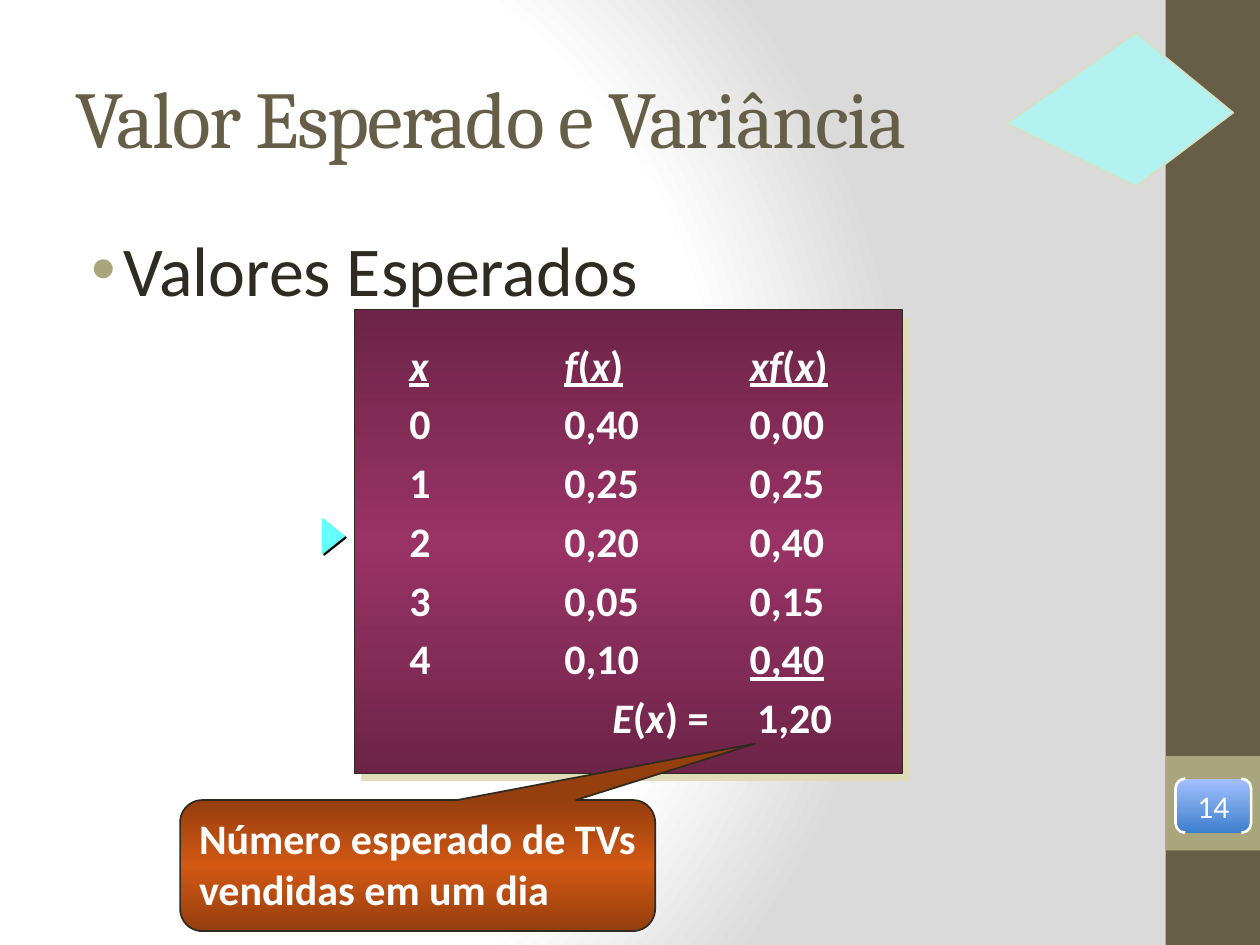
from dataclasses import dataclass

from lxml import etree
from pptx import Presentation
from pptx.dml.color import RGBColor
from pptx.enum.shapes import MSO_SHAPE
from pptx.enum.text import MSO_ANCHOR, PP_ALIGN
from pptx.oxml.ns import qn
from pptx.util import Emu, Inches, Pt

RECTANGLE = MSO_SHAPE.RECTANGLE
BRACKETS = MSO_SHAPE.DOUBLE_BRACKET
CALLOUT = MSO_SHAPE.ROUNDED_RECTANGULAR_CALLOUT
TRIANGLE = MSO_SHAPE.ISOSCELES_TRIANGLE
LEFT, CENTER = PP_ALIGN.LEFT, PP_ALIGN.CENTER
TOP, MIDDLE = MSO_ANCHOR.TOP, MSO_ANCHOR.MIDDLE
COLUMNS, ROWS = 10, 7.5
SLIDE_WIDTH, SLIDE_HEIGHT = Inches(10), Inches(7.5)
COLUMN, ROW = SLIDE_WIDTH / COLUMNS, SLIDE_HEIGHT / ROWS


@dataclass(frozen=True)
class Theme:
    """Colours, fonts and type sizes of the slide."""
    heading: str = "Cambria"
    text: str = "Calibri"
    brown: str = "675E47"
    olive: str = "A9A57C"
    ink: str = "2F2B20"
    sand: str = "DFDCB7"
    white: str = "FFFFFF"
    grey: str = "DADADA"
    aqua: str = "B3F0F0"
    cyan: str = "66FFFF"
    black: str = "000000"
    plum: str = "993366"
    rust: str = "D25814"
    title_size: float = 46
    body_size: float = 40
    data_size: float = 24
    number_size: float = 18


@dataclass(frozen=True)
class Box:
    """An area measured in columns and rows of the slide grid."""
    col: float
    row: float
    cols: float
    rows: float

    def inner(self, col, row, cols, rows):
        """Return a box placed from this box's corner."""
        return Box(self.col + col, self.row + row, cols, rows)

    def frame(self):
        """Return left, top, width and height in EMU."""
        return (Emu(round(self.col * COLUMN)), Emu(round(self.row * ROW)),
                Emu(round(self.cols * COLUMN)), Emu(round(self.rows * ROW)))


THEME = Theme()
HEADER = [("x", "iu"), ("\t", ""), ("f", "iu"), ("(", "u"), ("x", "iu"), (")", "u"),
          ("\t", ""), ("xf", "iu"), ("(", "u"), ("x", "iu"), (")", "u")]
DISTRIBUTION = [("0", "0,40", "0,00"), ("1", "0,25", "0,25"), ("2", "0,20", "0,40"),
                ("3", "0,05", "0,15"), ("4", "0,10", "0,40")]
EXPECTED = [("\t", ""), ("E", "i"), ("(", ""), ("x", "i"), (") =", ""), ("\t1,20", "")]


def child(parent, tag, **attributes):
    """Append a DrawingML element and return it."""
    element = etree.SubElement(parent, qn(tag))
    for key, value in attributes.items():
        element.set(key, str(value))
    return element


def add_run(paragraph, text, size, color, font=THEME.text, bold=False, style=""):
    """Add a run; style holds i for italic and u for underline."""
    run = paragraph.add_run()
    run.text = text
    run.font.size, run.font.name, run.font.bold = Pt(size), font, bold
    run.font.italic, run.font.underline = "i" in style, "u" in style
    run.font.color.rgb = RGBColor.from_string(color)
    return run


def set_gradient(fill, owner, stops):
    """Give a fill the stops (position, colour, shade) and return its element."""
    fill.gradient()
    gradient = next(owner.iter(qn("a:gradFill")))
    stop_list = gradient.find(qn("a:gsLst"))
    for old in list(stop_list):
        stop_list.remove(old)
    for position, color, shade in stops:
        stop = child(stop_list, "a:gs", pos=position * 1000)
        tint = child(stop, "a:srgbClr", val=color)
        if shade:
            child(tint, "a:shade", val=shade * 1000)
    return gradient


def set_band(shape, color):
    """Fill a shape with a vertical gradient, dark at both ends."""
    set_gradient(shape.fill, shape._element, [(0, color, 46), (50, color, 0), (100, color, 46)])
    shape.fill.gradient_angle = 270


def style_shape(shape, fill=None, line=None, width=1, shadow=None, distance=0):
    """Set fill, line and optional offset shadow."""
    shape.shadow.inherit = False
    if fill:
        shape.fill.solid()
        shape.fill.fore_color.rgb = RGBColor.from_string(fill)
    if line:
        shape.line.color.rgb = RGBColor.from_string(line)
        shape.line.width = Pt(width)
    else:
        shape.line.fill.background()
    if shadow:
        effects = shape._element.spPr.find(qn("a:effectLst"))
        outer = child(effects, "a:outerShdw", blurRad=0, dist=Pt(distance),
                      dir=2700000, algn="ctr", rotWithShape=0)
        child(outer, "a:srgbClr", val=shadow)


def place(placeholder, box, anchor):
    """Move a placeholder and return its first paragraph."""
    placeholder.left, placeholder.top, placeholder.width, placeholder.height = box.frame()
    placeholder.text_frame.vertical_anchor = anchor
    paragraph = placeholder.text_frame.paragraphs[0]
    paragraph.alignment = LEFT
    return paragraph


def add_background(slide):
    """Paint the round white to grey gradient."""
    gradient = set_gradient(slide.background.fill, slide._element,
                            [(0, THEME.white, 0), (75, THEME.white, 0), (100, THEME.grey, 0)])
    gradient.remove(gradient.find(qn("a:lin")))
    circle = child(gradient, "a:path")
    circle.set("path", "circle")
    child(circle, "a:fillToRect", l=20000, t=50000, r=100000, b=50000)


def add_sidebar(slide, box):
    """Draw the side strip with the slide number."""
    for area, color in ((box, THEME.brown), (box.inner(0, 6, box.cols, 0.75), THEME.olive)):
        style_shape(slide.shapes.add_shape(RECTANGLE, *area.frame()), color)
    number = slide.shapes.add_shape(BRACKETS, *box.inner(0.08, 6.18, 0.6, 0.43).frame())
    number.adjustments[0] = 0.18
    style_shape(number, line=THEME.white, width=1.5)
    frame = number.text_frame
    frame.margin_left = frame.margin_right = frame.margin_top = frame.margin_bottom = 0
    frame.vertical_anchor = MIDDLE
    frame.paragraphs[0].alignment = CENTER
    add_run(frame.paragraphs[0], "14", THEME.number_size, THEME.white)


def add_headings(slide, box):
    """Fill the title and the bulleted body."""
    title = place(slide.shapes.title, box.inner(0, 0, box.cols, 1.25), MIDDLE)
    run = add_run(title, "Valor Esperado e Variância", THEME.title_size, THEME.brown, THEME.heading)
    run.font._element.set("spc", "-100")
    body = place(slide.placeholders[1], box.inner(0, 1.45, box.cols, 5.25), TOP)
    body.space_before = Pt(0.2 * THEME.body_size)
    properties = body._p.get_or_add_pPr()
    properties.set("marL", str(Inches(0.38)))
    properties.set("indent", str(Inches(-0.25)))
    child(child(properties, "a:buClr"), "a:srgbClr", val=THEME.olive)
    child(properties, "a:buFont", typeface="Arial")
    child(properties, "a:buChar", char="•")
    add_run(body, "Valores Esperados", THEME.body_size, THEME.ink)


def add_diamond(slide, box):
    """Draw the uneven diamond across the corner."""
    corners = [(0.57, 1), (1, 0.52), (0.57, 0), (0, 0.59)]
    left, top, width, height = box.frame()
    points = [(left + x * width, top + y * height) for x, y in corners]
    builder = slide.shapes.build_freeform(*points[0])
    builder.add_line_segments(points[1:], close=True)
    style_shape(builder.convert_to_shape(), THEME.aqua, THEME.sand, 0.75)


def add_row(frame, pieces, stops, first=False):
    """Write one tabbed line of the distribution."""
    paragraph = frame.paragraphs[0] if first else frame.add_paragraph()
    paragraph.space_before = Pt(0.2 * THEME.data_size)
    tabs = child(paragraph._p.get_or_add_pPr(), "a:tabLst")
    for stop in stops:
        child(tabs, "a:tab", pos=Inches(stop), algn="l")
    for text, style in pieces:
        add_run(paragraph, text, THEME.data_size, THEME.white, bold=True, style=style)


def add_distribution(slide, box):
    """Draw the panel, its callout, the tabbed values and the marker."""
    panel = slide.shapes.add_shape(RECTANGLE, *box.frame())
    style_shape(panel, line=THEME.ink, width=0.5, shadow=THEME.sand, distance=5.7)
    set_band(panel, THEME.plum)
    callout = slide.shapes.add_shape(CALLOUT, *box.inner(-1.38, 3.89, 3.77, 1.04).frame())
    for index, value in enumerate((0.71, -0.93, 0.17)):
        callout.adjustments[index] = value
    style_shape(callout, line=THEME.ink)
    set_band(callout, THEME.rust)
    callout.text_frame.vertical_anchor = TOP
    caption = callout.text_frame.paragraphs[0]
    caption.alignment = LEFT
    add_run(caption, "Número esperado de TVs vendidas em um dia",
            THEME.data_size, THEME.white, bold=True)
    values = slide.shapes.add_textbox(*box.inner(0.04, 0.09, 3.96, 3.48).frame()).text_frame
    values.word_wrap, values.vertical_anchor = True, MIDDLE
    values.margin_left = Inches(0.4)
    columns = (1.23, 2.7)
    add_row(values, HEADER, columns, first=True)
    for x, f, product in DISTRIBUTION:
        last = "u" if x == DISTRIBUTION[-1][0] else ""
        add_row(values, [(f"{x}\t{f}\t", ""), (product, last)], columns)
    add_row(values, EXPECTED, (1.61, 2.76))
    marker = slide.shapes.add_shape(TRIANGLE, *box.inner(-0.3, 1.71, 0.27, 0.17).frame())
    marker.rotation = 90
    style_shape(marker, THEME.cyan, THEME.cyan, shadow=THEME.black, distance=1.4)


def main():
    """Build and save the slide."""
    deck = Presentation()
    deck.slide_width, deck.slide_height = SLIDE_WIDTH, SLIDE_HEIGHT
    slide = deck.slides.add_slide(deck.slide_layouts[1])
    add_background(slide)
    add_headings(slide, Box(0.5, 0.3, 8.33, 6.7))
    add_sidebar(slide, Box(9.25, 0, 0.75, ROWS))
    add_diamond(slide, Box(7.99, 0.26, 1.8, 1.22))
    add_distribution(slide, Box(2.81, 2.46, 4.35, 3.68))
    deck.save("out.pptx")


if __name__ == "__main__":
    main()
